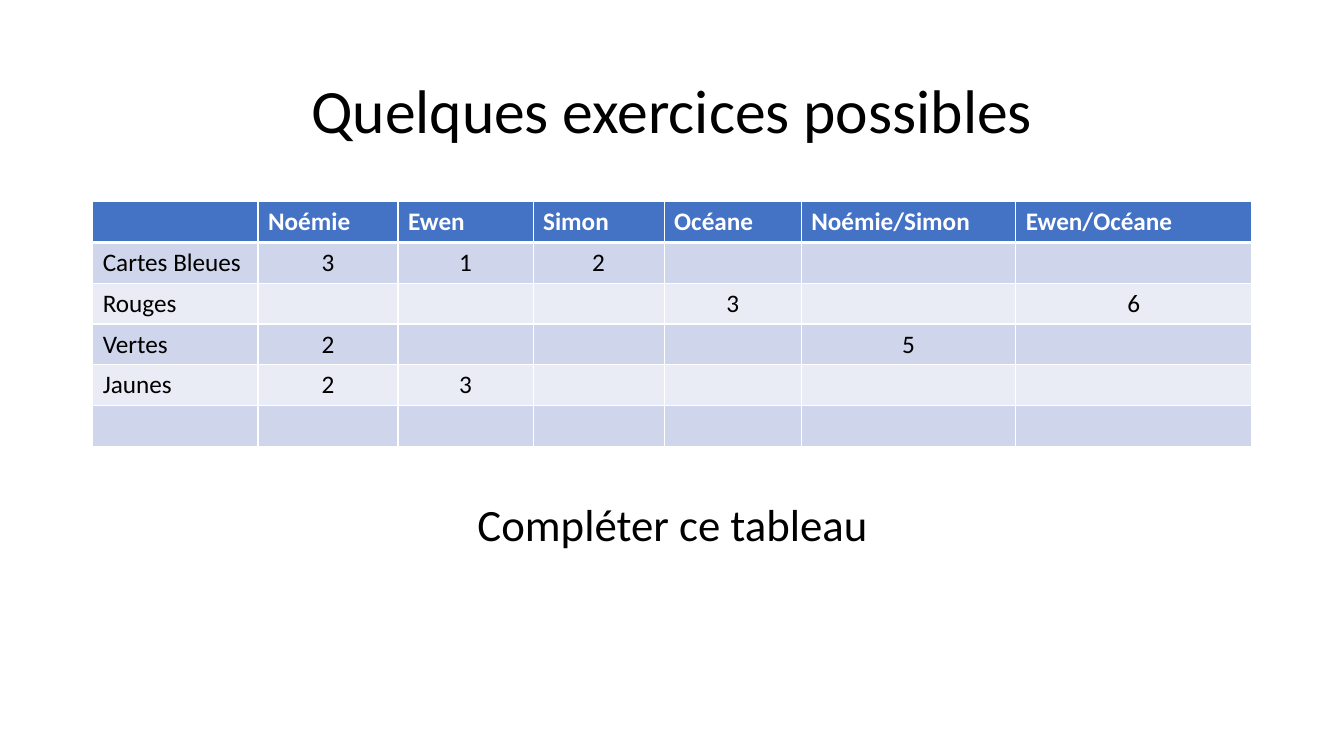
from lxml import etree
from pptx import Presentation
from pptx import util as u
from pptx.dml.color import RGBColor
from pptx.enum import text
from pptx.oxml import ns

PX = 4572  # 200 px to the inch
FONT = "Calibri"
BLACK = RGBColor(0x00, 0x00, 0x00)
WHITE = RGBColor(0xFF, 0xFF, 0xFF)
BLUE = RGBColor(0x44, 0x72, 0xC4)
BAND_DARK = RGBColor(0xCF, 0xD5, 0xEA)
BAND_LIGHT = RGBColor(0xE9, 0xEB, 0xF5)


def write(paragraph, words, size, color=BLACK, bold=False, centered=True):
    paragraph.alignment = text.PP_ALIGN.CENTER if centered else text.PP_ALIGN.LEFT
    run = paragraph.add_run()
    run.text = words
    run.font.name = FONT
    run.font.size = u.Pt(size)
    run.font.bold = bold
    run.font.color.rgb = color


def add_border(cell, side, points):
    properties = cell._tc.get_or_add_tcPr()
    line = etree.SubElement(properties, ns.qn(f"a:ln{side}"), w=str(u.Pt(points)))
    fill = etree.SubElement(line, ns.qn("a:solidFill"))
    etree.SubElement(fill, ns.qn("a:srgbClr"), val=str(WHITE))


presentation = Presentation()
presentation.slide_width = 2667 * PX
presentation.slide_height = 1500 * PX
slide = presentation.slides.add_slide(presentation.slide_layouts[6])

# Title and instruction
captions = [
    ("Quelques exercices possibles", 44, 0.9, (184, 80, 2300, 290), text.MSO_ANCHOR.MIDDLE),
    ("Compléter ce tableau", 32, 1.0, (350, 976, 1970, 128), text.MSO_ANCHOR.TOP),
]
for words, size, spacing, box, anchor in captions:
    frame = slide.shapes.add_textbox(*(length * PX for length in box)).text_frame
    frame.word_wrap = True
    frame.vertical_anchor = anchor
    frame.paragraphs[0].line_spacing = spacing
    write(frame.paragraphs[0], words, size)

# Table of cards per child
rows = [
    ["", "Noémie", "Ewen", "Simon", "Océane", "Noémie/Simon", "Ewen/Océane"],
    ["Cartes Bleues", "3", "1", "2", "", "", ""],
    ["Rouges", "", "", "", "3", "", "6"],
    ["Vertes", "2", "", "", "", "5", ""],
    ["Jaunes", "2", "3", "", "", "", ""],
    [""] * 7,
]
column_widths = [328, 278, 268, 260, 272, 426, 468]
row_height = 81
table = slide.shapes.add_table(
    len(rows), len(column_widths), 184 * PX, 400 * PX,
    sum(column_widths) * PX, len(rows) * row_height * PX).table
for column, width in zip(table.columns, column_widths):
    column.width = width * PX

for row_index, values in enumerate(rows):
    table.rows[row_index].height = row_height * PX
    header = row_index == 0
    band = BLUE if header else BAND_DARK if row_index % 2 else BAND_LIGHT
    for column_index, value in enumerate(values):
        cell = table.cell(row_index, column_index)
        for side in "LRTB":
            thick = (header and side == "B") or (row_index == 1 and side == "T")
            add_border(cell, side, 3 if thick else 1)
        cell.fill.solid()
        cell.fill.fore_color.rgb = band
        if value:
            write(cell.text_frame.paragraphs[0], value, 18, WHITE if header else BLACK,
                  bold=header, centered=not header and column_index > 0)

presentation.save("out.pptx")
